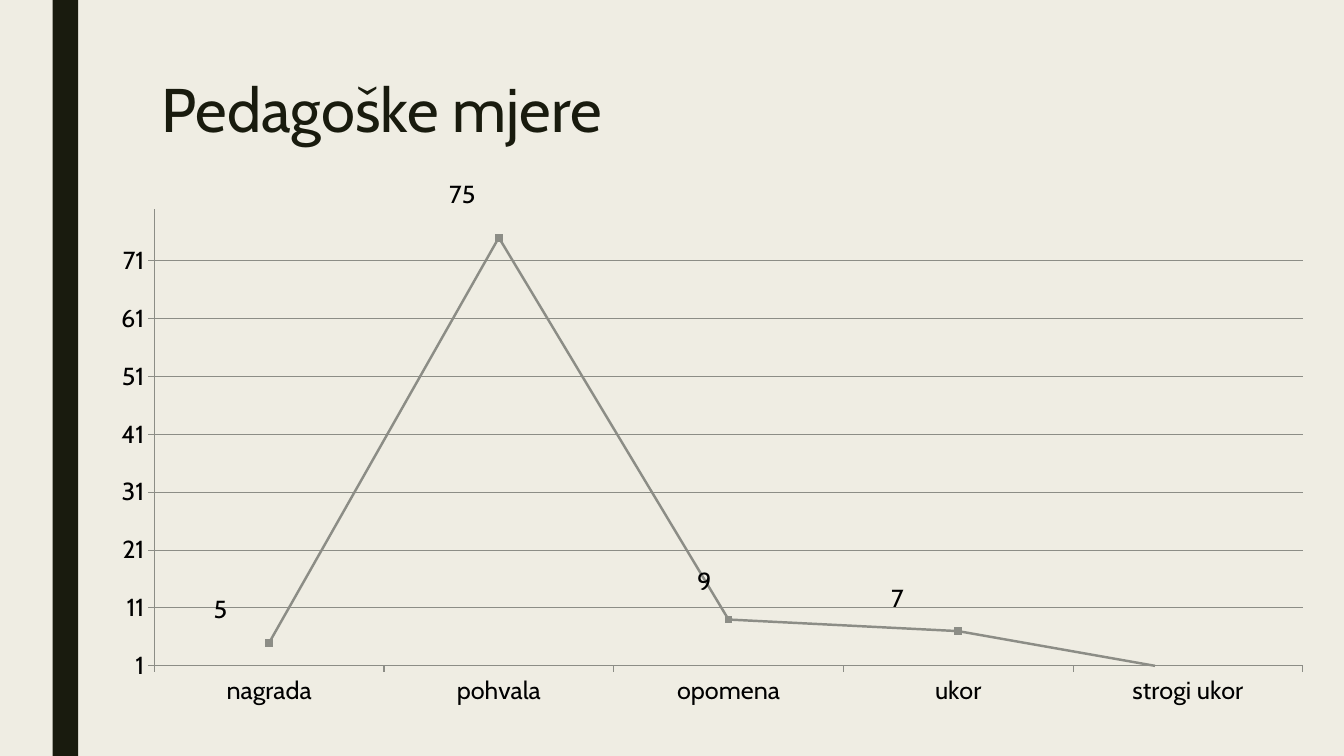
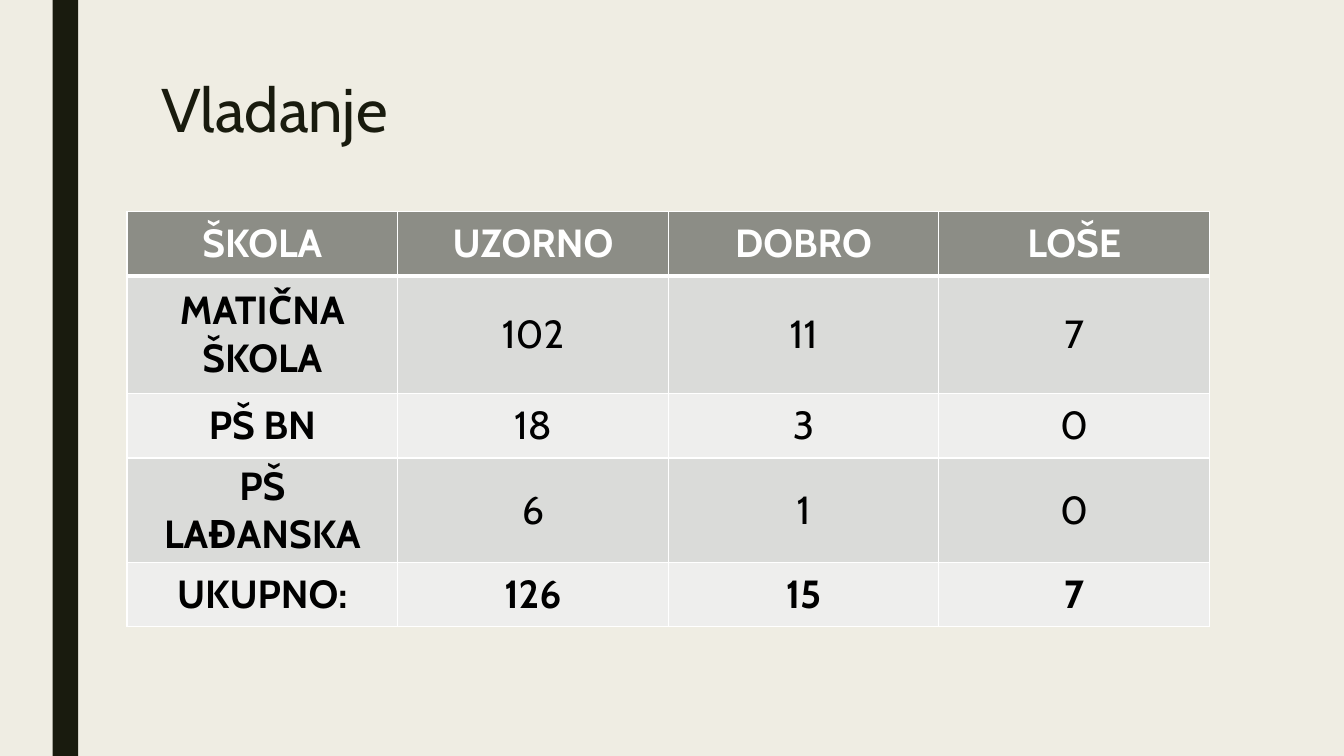
"""Build two slides on pupils' pedagogical measures and conduct."""
import lxml.etree
import pptx
import pptx.chart.data
import pptx.dml.color
import pptx.enum.chart
import pptx.enum.shapes
import pptx.enum.text
import pptx.oxml
import pptx.oxml.ns
import pptx.util

Cm = pptx.util.Cm
Pt = pptx.util.Pt
qn = pptx.oxml.ns.qn
FONT = "Cabin"
COLORS = {
    "background": "EFEDE3", "dark": "191B0E", "gray": "8C8D86", "text": "000000",
    "white": "FFFFFF", "odd_row": "DADBD9", "even_row": "EEEEED",
}


def style_font(font, size, color, bold=False):
    font.name = FONT
    font.size = Pt(size)
    font.bold = bold
    font.color.rgb = pptx.dml.color.RGBColor.from_string(COLORS[color])


def manual_layout(x, y, extra=""):
    return pptx.oxml.parse_xml(
        f'<c:layout {pptx.oxml.ns.nsdecls("c")}><c:manualLayout>{extra}'
        f'<c:x val="{x}"/><c:y val="{y}"/></c:manualLayout></c:layout>')


deck = pptx.Presentation()
deck.slide_width, deck.slide_height = Cm(33.87), Cm(19.05)
master_fill = deck.slide_master.background.fill
master_fill.solid()
master_fill.fore_color.rgb = pptx.dml.color.RGBColor.from_string(COLORS["background"])

slides = []
for heading in ["Pedagoške mjere", "Vladanje"]:
    slide = deck.slides.add_slide(deck.slide_layouts[6])
    band = slide.shapes.add_shape(
        pptx.enum.shapes.MSO_SHAPE.RECTANGLE, Cm(1.33), 0, Cm(0.64), deck.slide_height)
    band.shadow.inherit = False
    band.fill.solid()
    band.fill.fore_color.rgb = pptx.dml.color.RGBColor.from_string(COLORS["dark"])
    band.line.fill.background()
    title = slide.shapes.add_textbox(Cm(3.81), Cm(1.9), Cm(26.67), Cm(4.11)).text_frame
    title.word_wrap = True
    title.paragraphs[0].line_spacing = 0.89
    run = title.paragraphs[0].add_run()
    run.text = heading
    style_font(run.font, 44, "dark")
    slides.append(slide)
measures_slide, conduct_slide = slides

measures = pptx.chart.data.CategoryChartData()
measures.categories = ["nagrada", "pohvala", "opomena", "ukor", "strogi ukor"]
measures.add_series("Series 1", [5, 75, 9, 7, 0])
chart = measures_slide.shapes.add_chart(
    pptx.enum.chart.XL_CHART_TYPE.LINE_MARKERS,
    Cm(2.54), Cm(4.52), Cm(30.66), Cm(13.59), measures).chart
chart.has_legend = False
chart.has_title = False
style_font(chart.font, 18, "text")
chart.plots[0].vary_by_categories = False

plot_area = chart.plots[0]._element.getparent()
for old_layout in plot_area.findall(qn("c:layout")):
    plot_area.remove(old_layout)
plot_layout = manual_layout(
    0.044, 0.033,
    '<c:layoutTarget val="inner"/><c:xMode val="edge"/><c:yMode val="edge"/>')
for side, share in {"w": 0.944, "h": 0.867}.items():
    lxml.etree.SubElement(plot_layout[0], qn(f"c:{side}")).set("val", str(share))
plot_area.insert(0, plot_layout)

values_axis = chart.value_axis
values_axis.minimum_scale, values_axis.maximum_scale = 1, 80
values_axis.major_unit = 10
values_axis.has_major_gridlines = True
for axis in (chart.category_axis, values_axis):
    axis.major_tick_mark = pptx.enum.chart.XL_TICK_MARK.OUTSIDE
for line in (chart.category_axis.format.line, values_axis.format.line,
             values_axis.major_gridlines.format.line):
    line.width = Pt(0.75)
    line.color.rgb = pptx.dml.color.RGBColor.from_string(COLORS["gray"])

counts = chart.plots[0].series[0]
counts.smooth = False
counts.format.line.width = Pt(1.75)
counts.format.line.color.rgb = pptx.dml.color.RGBColor.from_string(COLORS["gray"])
counts.marker.style = pptx.enum.chart.XL_MARKER_STYLE.SQUARE
counts.marker.size = 5
counts.marker.format.fill.solid()
counts.marker.format.fill.fore_color.rgb = pptx.dml.color.RGBColor.from_string(COLORS["gray"])
counts.marker.format.line.color.rgb = pptx.dml.color.RGBColor.from_string(COLORS["gray"])

counts.data_labels.show_value = False
for index, shift in enumerate([(-0.04, -0.02), (-0.03, -0.04), (-0.02, -0.03), (-0.05, -0.02)]):
    label = counts.points[index].data_label
    style_font(label.font, 18, "text")
    label.position = pptx.enum.chart.XL_LABEL_POSITION.ABOVE
for label_xml, shift in zip(
        counts._element.iter(qn("c:dLbl")),
        [(-0.04, -0.02), (-0.03, -0.04), (-0.02, -0.03), (-0.05, -0.02)]):
    label_xml.insert(1, manual_layout(*shift))
for leader in counts._element.iter(qn("c:showLeaderLines")):
    leader.set("val", "0")

conduct = [
    ["ŠKOLA", "UZORNO", "DOBRO", "LOŠE"],
    ["MATIČNA ŠKOLA", "102", "11", "7"],
    ["PŠ BN", "18", "3", "0"],
    ["PŠ LAĐANSKA", "6", "1", "0"],
    ["UKUPNO:", "126", "15", "7"],
]
row_heights = [1.63, 2.95, 1.63, 1.63, 1.63]
table = conduct_slide.shapes.add_table(
    len(conduct), len(conduct[0]), Cm(3.2), Cm(5.33), Cm(27.28), Cm(sum(row_heights))).table
for column in table.columns:
    column.width = Cm(6.82)
for row_index, (height, entries) in enumerate(zip(row_heights, conduct)):
    table.rows[row_index].height = Cm(height)
    is_header = row_index == 0
    row_color = "gray" if is_header else "odd_row" if row_index % 2 else "even_row"
    border_widths = {"L": 1, "R": 1, "T": 3 if row_index == 1 else 1, "B": 3 if is_header else 1}
    for column_index, entry in enumerate(entries):
        cell = table.cell(row_index, column_index)
        cell.vertical_anchor = pptx.enum.text.MSO_ANCHOR.MIDDLE
        for side, width in border_widths.items():
            cell._tc.get_or_add_tcPr().append(pptx.oxml.parse_xml(
                f'<a:ln{side} {pptx.oxml.ns.nsdecls("a")} w="{Pt(width)}"><a:solidFill>'
                f'<a:srgbClr val="{COLORS["white"]}"/></a:solidFill></a:ln{side}>'))
        cell.fill.solid()
        cell.fill.fore_color.rgb = pptx.dml.color.RGBColor.from_string(COLORS[row_color])
        paragraph = cell.text_frame.paragraphs[0]
        paragraph.alignment = pptx.enum.text.PP_ALIGN.CENTER
        run = paragraph.add_run()
        run.text = entry
        style_font(run.font, 28, "white" if is_header else "text",
                   bold=column_index == 0 or row_index in (0, len(conduct) - 1))

deck.save("out.pptx")
